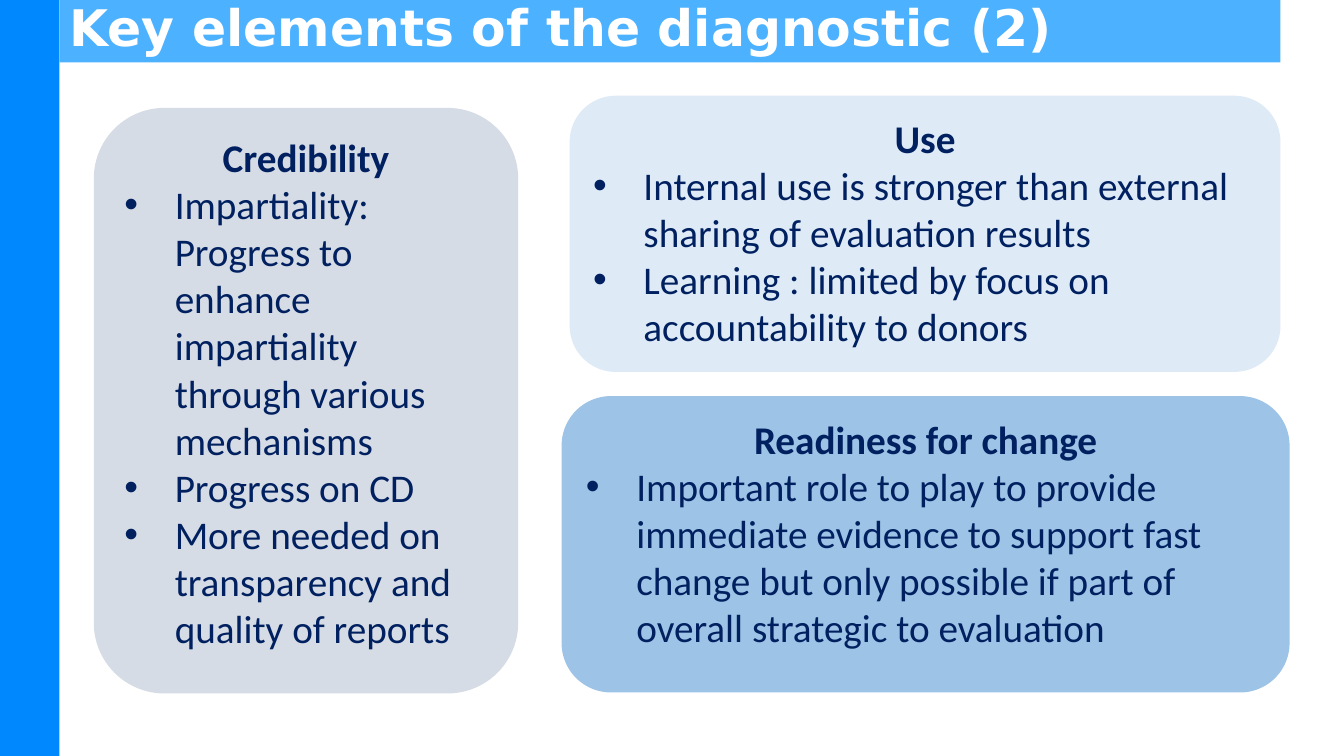
from lxml import etree
from pptx import Presentation
from pptx import util as u
from pptx.dml.color import RGBColor
from pptx.enum import shapes, text
from pptx.oxml import ns

COLORS = {
    "sidebar": "0088FF",
    "banner": "0091FF",
    "title": "FFFFFF",
    "body": "002060",
    "credibility": "D6DCE5",
    "use": "DEEBF7",
    "readiness": "9DC3E6",
}


def fill_shape(shape, color):
    shape.fill.solid()
    shape.fill.fore_color.rgb = RGBColor.from_string(COLORS[color])
    shape.line.fill.background()


def format_runs(paragraph, font_name, size, color, bold):
    for run in paragraph.runs:
        run.font.name = font_name
        run.font.size = u.Pt(size)
        run.font.bold = bold
        run.font.color.rgb = RGBColor.from_string(COLORS[color])


presentation = Presentation()
presentation.slide_width = u.Inches(13.33)
presentation.slide_height = u.Inches(7.5)
slide = presentation.slides.add_slide(presentation.slide_layouts[5])

# Sidebar
sidebar = slide.shapes.add_shape(
    shapes.MSO_SHAPE.RECTANGLE, 0, 0, u.Inches(0.59), u.Inches(7.5))
sidebar.shadow.inherit = False
fill_shape(sidebar, "sidebar")

# Title banner, 70% opaque
title = slide.shapes.title
title.left, title.top = u.Inches(0.59), u.Inches(-0.03)
title.width, title.height = u.Inches(12.11), u.Inches(0.65)
fill_shape(title, "banner")
banner_color = title.fill._xPr.find(".//" + ns.qn("a:srgbClr"))
etree.SubElement(banner_color, ns.qn("a:alpha"), val="70000")
title.text_frame.text = "Key elements of the diagnostic (2)"
title.text_frame.auto_size = text.MSO_AUTO_SIZE.NONE
title.text_frame.vertical_anchor = text.MSO_ANCHOR.MIDDLE
heading = title.text_frame.paragraphs[0]
heading.alignment = text.PP_ALIGN.LEFT
heading.line_spacing = 0.9
format_runs(heading, "DejaVu Sans", 36, "title", True)

# Cards: color, left, top, width, height, heading, bullets
cards = [
    ("credibility", 0.93, 1.07, 4.21, 5.81, "Credibility", [
        "Impartiality: Progress to enhance impartiality through various mechanisms",
        "Progress on CD",
        "More needed on transparency and quality of reports",
    ]),
    ("use", 5.65, 0.95, 7.05, 2.74, "Use", [
        "Internal use is stronger than external sharing of evaluation results",
        "Learning : limited by focus on accountability to donors",
    ]),
    ("readiness", 5.57, 3.93, 7.22, 2.94, "Readiness for change", [
        "Important role to play to provide immediate evidence to support fast "
        "change but only possible if part of overall strategic to evaluation",
    ]),
]
for color, left, top, width, height, card_heading, bullets in cards:
    card = slide.shapes.add_shape(
        shapes.MSO_SHAPE.ROUNDED_RECTANGLE,
        u.Inches(left), u.Inches(top), u.Inches(width), u.Inches(height))
    card.shadow.inherit = False
    fill_shape(card, color)
    frame = card.text_frame
    frame.word_wrap = True
    frame.vertical_anchor = text.MSO_ANCHOR.TOP
    frame.text = card_heading
    frame.paragraphs[0].alignment = text.PP_ALIGN.CENTER
    format_runs(frame.paragraphs[0], "Calibri", 28, "body", True)

    for bullet in bullets:
        paragraph = frame.add_paragraph()
        paragraph.text = bullet
        paragraph.alignment = text.PP_ALIGN.LEFT
        format_runs(paragraph, "Calibri", 28, "body", False)
        properties = paragraph._p.get_or_add_pPr()
        properties.set("marL", str(u.Inches(0.5)))
        properties.set("indent", str(u.Inches(-0.5)))
        etree.SubElement(properties, ns.qn("a:buFont"), typeface="Arial")
        etree.SubElement(properties, ns.qn("a:buChar"), char="•")

presentation.save("out.pptx")
